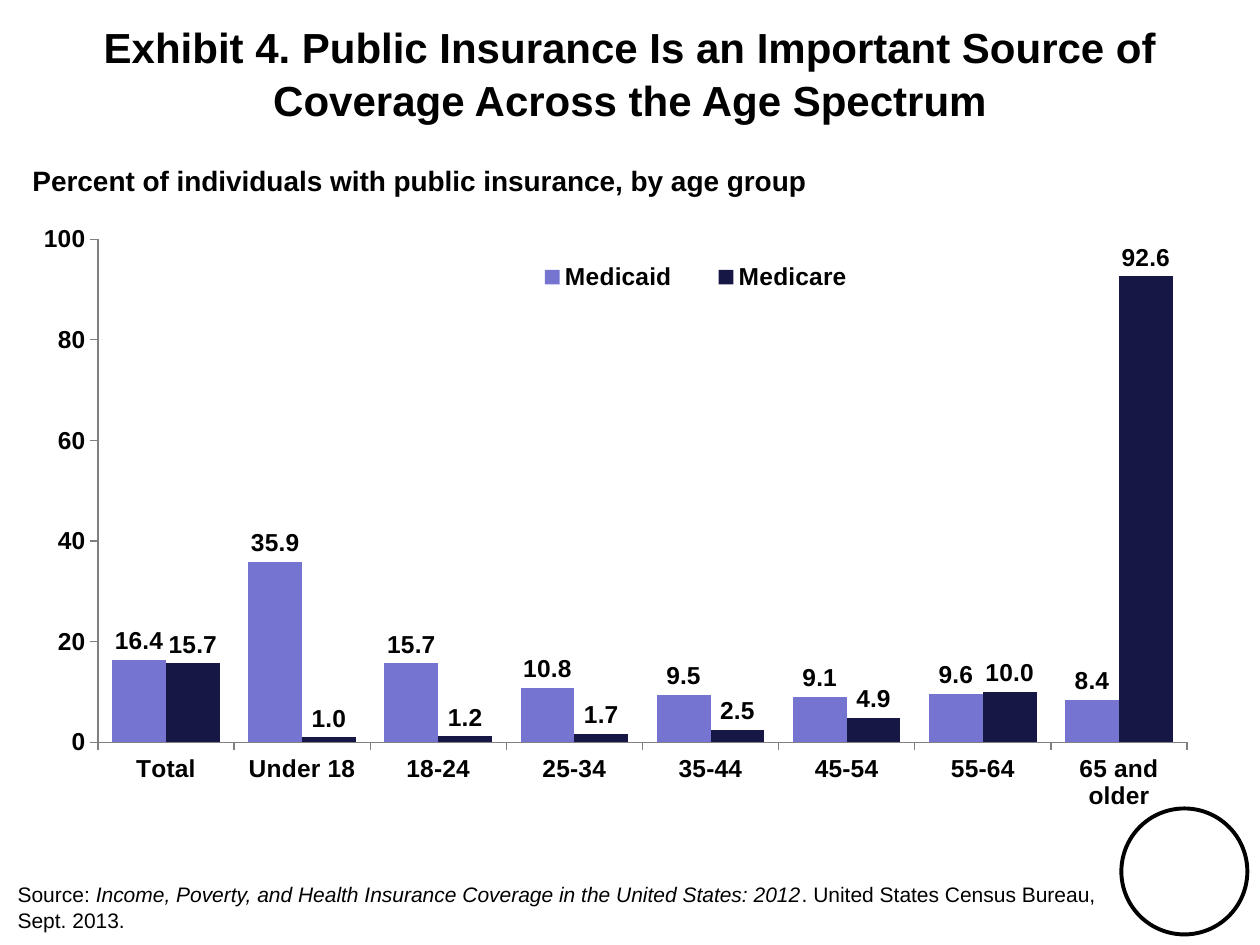
from lxml.etree import SubElement
from pptx import Presentation
from pptx.chart.data import CategoryChartData
from pptx.dml.color import RGBColor
from pptx.enum.chart import XL_CHART_TYPE, XL_LABEL_POSITION, XL_LEGEND_POSITION, XL_TICK_MARK
from pptx.enum.shapes import MSO_SHAPE
from pptx.enum.text import PP_ALIGN
from pptx.oxml.ns import qn
from pptx.util import Pt

FONT = "Arial"
COLORS = {"ink": "000000", "axis": "808080", "Medicaid": "7575D1", "Medicare": "171745"}
TITLE = "Exhibit 4. Public Insurance Is an Important Source of Coverage Across the Age Spectrum"
LEAD = "Percent of individuals with public insurance, by age group"
SOURCE = [
    ("Source: ", False),
    ("Income, Poverty, and Health Insurance Coverage in the United States: 2012", True),
    (". United States Census Bureau, Sept. 2013.", False),
]
AGES = ["Total", "Under 18", "18-24", "25-34", "35-44", "45-54", "55-64", "65 and older"]
SHARES = {
    "Medicaid": [16.4, 35.9, 15.7, 10.8, 9.5, 9.1, 9.6, 8.4],
    "Medicare": [15.7, 1.0, 1.2, 1.7, 2.5, 4.9, 10.0, 92.6],
}
PLOT = {"x": 0.056, "y": 0.037, "w": 0.918, "h": 0.836}
KEY = {"x": 0.4, "y": 0.07, "w": 0.32, "h": 0.06}


def color(name):
    return RGBColor.from_string(COLORS[name])


def style(font, size, bold=False, italic=False):
    font.name, font.size, font.bold, font.italic = FONT, Pt(size), bold, italic
    font.color.rgb = color("ink")


def write(slide, text, box, size, bold=False, align=PP_ALIGN.LEFT, wrap=True, spacing=None):
    frame = slide.shapes.add_textbox(*map(Pt, box)).text_frame
    frame.word_wrap = wrap
    para = frame.paragraphs[0]
    para.alignment = align
    para.line_spacing = spacing
    for words, italic in [(text, False)] if isinstance(text, str) else text:
        run = para.add_run()
        run.text = words
        style(run.font, size, bold, italic)


def place(part, area, inner=False):
    layout = part.find(qn("c:layout"))
    if layout is None:
        layout = SubElement(part, qn("c:layout"))
        anchor = part.find(qn("c:legendPos"))
        if anchor is not None:
            anchor.addnext(layout)
        else:
            part.insert(0, layout)
    manual = SubElement(layout, qn("c:manualLayout"))
    if inner:
        SubElement(manual, qn("c:layoutTarget"), val="inner")
    for side in "xy":
        SubElement(manual, qn(f"c:{side}Mode"), val="edge")
    for side, value in area.items():
        SubElement(manual, qn(f"c:{side}"), val=str(value))


def draw(slide, box):
    data = CategoryChartData(number_format="#,##0.0")
    data.categories = AGES
    for name, values in SHARES.items():
        data.add_series(name, values)
    kind = XL_CHART_TYPE.COLUMN_CLUSTERED
    chart = slide.shapes.add_chart(kind, *map(Pt, box), data).chart
    style(chart.font, 14, bold=True)
    chart.has_title = False

    chart.has_legend = True
    chart.legend.position = XL_LEGEND_POSITION.RIGHT
    chart.legend.include_in_layout = True
    style(chart.legend.font, 14, bold=True)
    place(chart.legend._element, KEY)
    place(chart._chartSpace.chart.plotArea, PLOT, inner=True)

    for axis in (chart.category_axis, chart.value_axis):
        axis.has_major_gridlines = False
        axis.major_tick_mark = XL_TICK_MARK.OUTSIDE
        axis.minor_tick_mark = XL_TICK_MARK.NONE
        axis.format.line.color.rgb = color("axis")
        axis.format.line.width = Pt(0.75)
        style(axis.tick_labels.font, 14, bold=True)
    scale = chart.value_axis
    scale.minimum_scale, scale.maximum_scale, scale.major_unit = 0, 100, 20
    scale.tick_labels.number_format = "0"
    scale.tick_labels.number_format_is_linked = False

    plot = chart.plots[0]
    plot.gap_width, plot.overlap = 53, 0
    plot.vary_by_categories = False
    for series in plot.series:
        series.format.fill.solid()
        series.format.fill.fore_color.rgb = color(series.name)
        labels = series.data_labels
        labels.show_value = True
        labels.number_format = "#,##0.0"
        labels.number_format_is_linked = False
        labels.position = XL_LABEL_POSITION.OUTSIDE_END
        style(labels.font, 14, bold=True)


def main():
    deck = Presentation()
    deck.slide_width, deck.slide_height = Pt(720), Pt(540)
    slide = deck.slides.add_slide(deck.slide_layouts[6])

    seal = slide.shapes.add_shape(MSO_SHAPE.OVAL, Pt(640.8), Pt(462), Pt(72), Pt(72))
    seal.shadow.inherit = False
    seal.fill.background()
    seal.line.color.rgb = color("ink")
    seal.line.width = Pt(2.25)

    write(slide, TITLE, (0, 7.2, 720, 57.6), 24, bold=True, align=PP_ALIGN.CENTER, spacing=1.05)
    write(slide, LEAD, (11.5, 90, 463, 26.6), 16, bold=True, wrap=False)
    draw(slide, (18, 124, 678, 344))
    write(slide, SOURCE, (3, 500.4, 656, 36), 12)
    deck.save("out.pptx")


if __name__ == "__main__":
    main()
